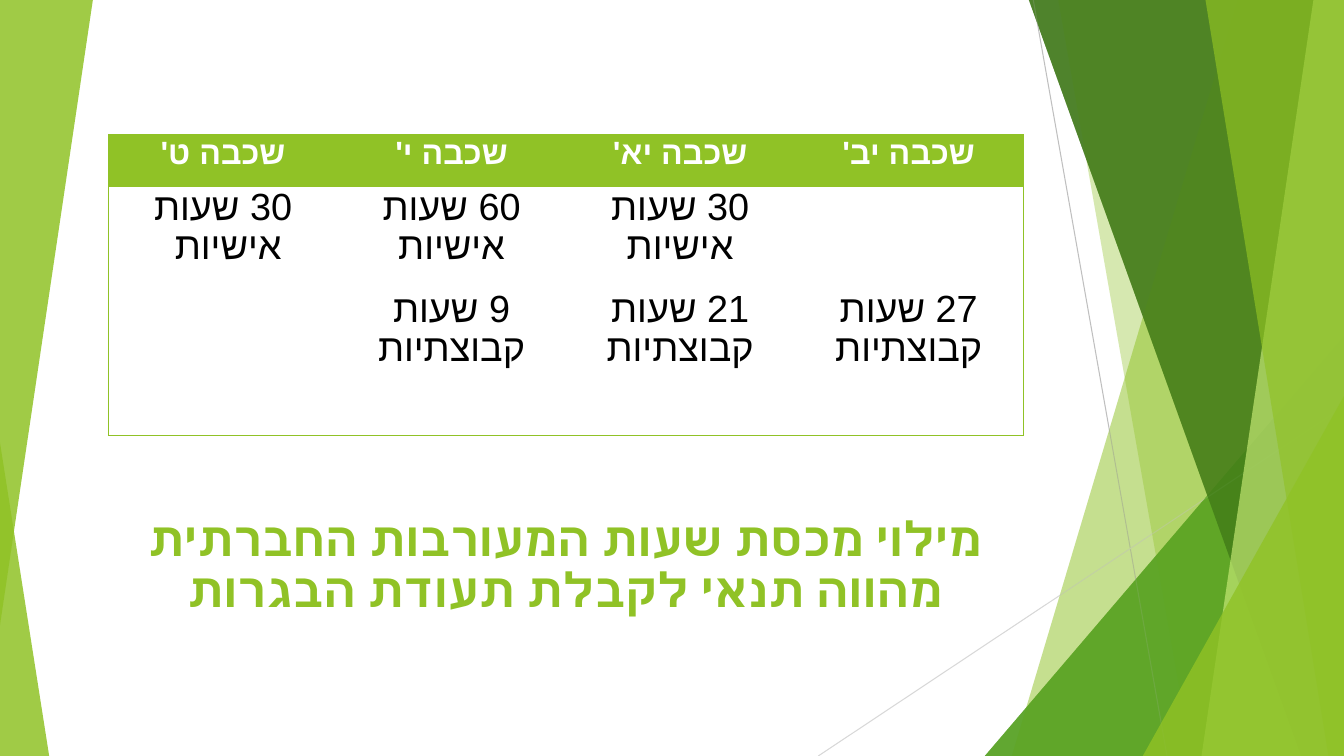
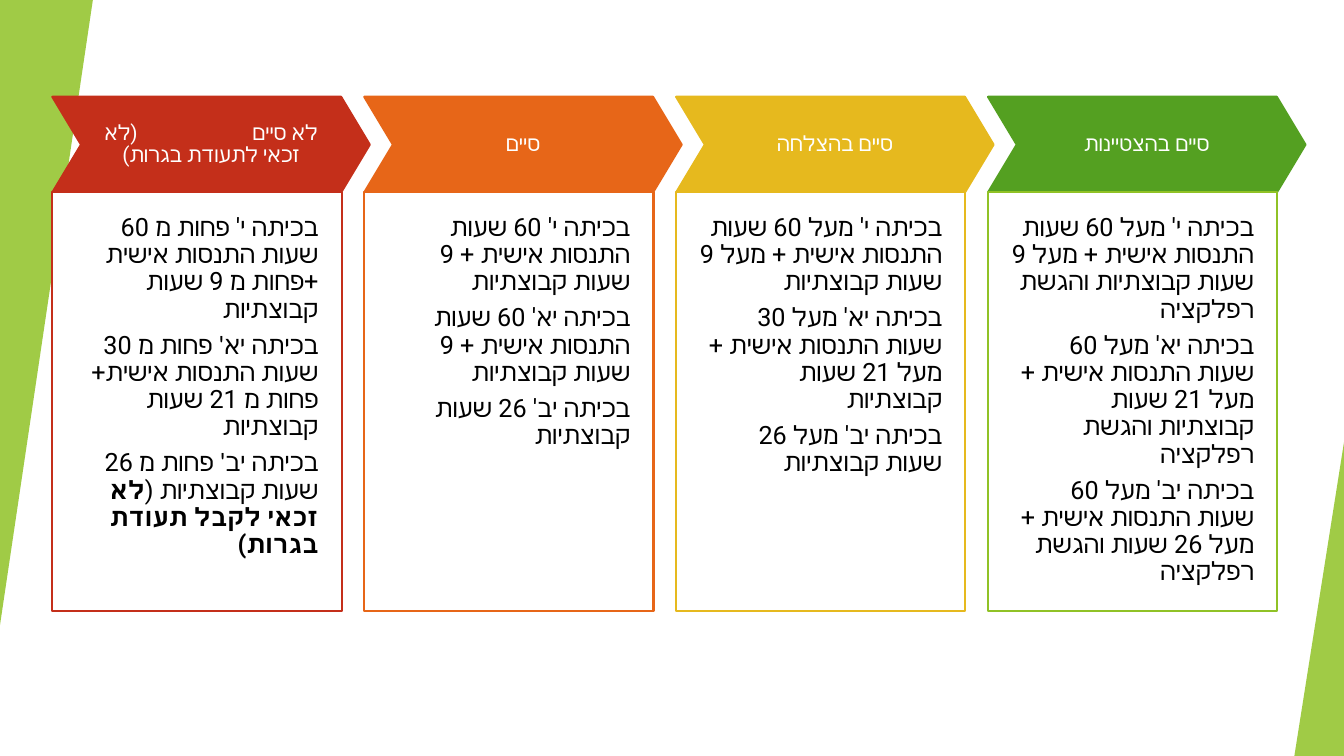
import dataclasses

import lxml.etree
import pptx
import pptx.dml.color
import pptx.enum.shapes
import pptx.enum.text
import pptx.oxml.ns
import pptx.util

Cm = pptx.util.Cm
Pt = pptx.util.Pt
qn = pptx.oxml.ns.qn
Sub = lxml.etree.SubElement
Kind = pptx.enum.shapes.MSO_SHAPE
Align = pptx.enum.text.PP_ALIGN
Anchor = pptx.enum.text.MSO_ANCHOR

WIDE, HIGH = 33.87, 19.05


@dataclasses.dataclass(frozen=True)
class Theme:
    lime: str = "90C226"
    green: str = "54A021"
    dark: str = "3F7818"
    pale: str = "BFE471"
    red: str = "C42F1A"
    orange: str = "E76618"
    gold: str = "E6B91E"
    white: str = "FFFFFF"
    black: str = "000000"
    gray: str = "BFBFBF"
    mist: str = "D8D8D8"
    main: str = "Roboto"
    alt: str = "Lato"
    grid: str = "Arial"
    title: int = 34
    cell: int = 27
    head: int = 23
    body: int = 18
    step: int = 15


def rgb(color):
    return pptx.dml.color.RGBColor.from_string(color)


def write(frame, paras, *, size, color, font, bold=False, align=Align.CENTER,
          rtl=True, lines=None, before=0, pad=None, anchor=None):
    """Fill a text frame; a paragraph is a string or a list of (text, changes)."""
    frame.word_wrap = True
    if anchor is not None:
        frame.vertical_anchor = anchor
    if pad:
        (frame.margin_left, frame.margin_top,
         frame.margin_right, frame.margin_bottom) = map(Cm, pad)
    for i, runs in enumerate(paras):
        para = frame.paragraphs[0] if i == 0 else frame.add_paragraph()
        para.alignment = align
        if lines:
            para.line_spacing = lines
        para.space_before = Pt(before if i else 0)
        if rtl:
            para._p.get_or_add_pPr().set("rtl", "1")
        for text, diff in [(runs, {})] if isinstance(runs, str) else runs:
            run = para.add_run()
            run.text = text
            run.font.size = Pt(size)
            run.font.bold = diff.get("bold", bold)
            run.font.color.rgb = rgb(color)
            run.font.name = face = diff.get("font", font)
            props = run._r.get_or_add_rPr()
            Sub(props, qn("a:cs"), typeface=face)
            if "gap" in diff:
                props.set("spc", str(diff["gap"] * 100))


class Deck:
    def __init__(self, theme):
        self.theme = theme
        self.show = pptx.Presentation()
        self.show.slide_width, self.show.slide_height = Cm(WIDE), Cm(HIGH)

    def page(self, layout):
        self.slide = self.show.slides.add_slide(self.show.slide_layouts[layout])

    def paint(self, shape, fill, alpha=100, line=None):
        shape.shadow.inherit = False
        shape.fill.solid()
        shape.fill.fore_color.rgb = rgb(fill)
        if alpha < 100:
            tone = shape._element.spPr.find(".//" + qn("a:srgbClr"))
            Sub(tone, qn("a:alpha"), val=str(alpha * 1000))
        if line:
            shape.line.color.rgb = rgb(line)
            shape.line.width = Pt(1.5)
        else:
            shape.line.fill.background()
        return shape

    def shape(self, kind, box, fill, adj=None, **look):
        item = self.slide.shapes.add_shape(kind, *map(Cm, box))
        if adj is not None:
            item.adjustments[0] = adj
        return self.paint(item, fill, **look)

    def wedge(self, top, base, fill, alpha):
        """Band from a slanted left edge to the right edge of the slide."""
        pen = self.slide.shapes.build_freeform(Cm(top), 0)
        pen.add_line_segments([(Cm(WIDE), 0), (Cm(WIDE), Cm(HIGH)),
                               (Cm(base), Cm(HIGH))])
        self.paint(pen.convert_to_shape(), fill, alpha)

    def corner(self, left, top, fill, alpha):
        """Right triangle that fills the lower right corner."""
        box = left, top, WIDE - left, HIGH - top
        self.shape(Kind.ISOSCELES_TRIANGLE, box, fill, adj=1, alpha=alpha)

    def line(self, start, end, color):
        item = self.slide.shapes.add_connector(
            pptx.enum.shapes.MSO_CONNECTOR.STRAIGHT, *map(Cm, start + end))
        item.line.color.rgb = rgb(color)
        item.line.width = Pt(0.75)
        Sub(item._element.spPr, qn("a:effectLst"))

    def bands(self):
        t = self.theme
        self.wedge(31.19, 25.5, t.lime, 30)
        self.wedge(26.67, 30.02, t.lime, 20)
        self.corner(24.82, 8.46, t.green, 72)
        self.wedge(25.93, 32.79, t.dark, 70)
        self.wedge(33.1, 30.28, t.pale, 70)
        self.wedge(30.38, 33.48, t.lime, 65)
        self.corner(28.8, 9.98, t.lime, 80)

    def flank(self):
        """Tall triangle down the left edge."""
        item = self.shape(Kind.ISOSCELES_TRIANGLE, (0, 0, 2.34, 15.75),
                          self.theme.lime, adj=1, alpha=85)
        item.rotation = 180

    def title(self, text, box):
        t, item = self.theme, self.slide.shapes.title
        item.left, item.top, item.width, item.height = map(Cm, box)
        write(item.text_frame, [text], size=t.title, color=t.lime, font=t.main,
              bold=True, rtl=False, lines=0.9, anchor=Anchor.BOTTOM,
              pad=(0.25, 0.13, 0.25, 0.13))

    def edge(self, cell, sides):
        props = cell._tc.get_or_add_tcPr()
        for side in "LRTB":
            line = Sub(props, qn("a:ln" + side), w=str(Pt(0.75)))
            if side in sides:
                fill = Sub(line, qn("a:solidFill"))
                Sub(fill, qn("a:srgbClr"), val=self.theme.lime)
            else:
                Sub(line, qn("a:noFill"))

    def table(self, rows, left, top, width, highs):
        t, cols = self.theme, len(rows[0])
        grid = self.slide.shapes.add_table(
            len(rows), cols, *map(Cm, (left, top, width * cols, sum(highs)))).table
        grid.first_row = grid.horz_banding = False
        for col in grid.columns:
            col.width = Cm(width)
        for r, row in enumerate(rows):
            grid.rows[r].height = Cm(highs[r])
            for c, text in enumerate(row):
                cell = grid.cell(r, c)
                cell.margin_left = cell.margin_right = Cm(0.2)
                cell.margin_top = cell.margin_bottom = Cm(0.1)
                self.edge(cell, "L" * (c == 0) + "R" * (c == cols - 1)
                          + "T" * (r < 2) + "B" * (r != 0))
                if r == 0:
                    cell.fill.solid()
                    cell.fill.fore_color.rgb = rgb(t.lime)
                else:
                    cell.fill.background()
                if text:
                    write(cell.text_frame, [text], font=t.grid, bold=r == 0,
                          size=t.cell if r else t.head,
                          color=t.black if r else t.white, lines=0.9)

    def card(self, left, head, paras, color, line):
        """Chevron heading above a framed list."""
        t = self.theme
        step = self.shape(Kind.CHEVRON, (left, 2.44, 8, 2.41), color,
                          adj=0.3, line=color)
        write(step.text_frame, [head], size=t.step, color=t.white, font=t.main,
              lines=0.9, anchor=Anchor.MIDDLE, pad=(0.3,) * 4)
        body = self.shape(Kind.RECTANGLE, (left, 4.83, 7.29, 10.57), t.white,
                          line=line)
        write(body.text_frame, paras, size=t.body, color=t.black, font=t.main,
              align=Align.RIGHT, lines=0.9, before=6.3, anchor=Anchor.TOP,
              pad=(0.58, 0.58, 0.58, 1.14))


def hours(deck):
    t = deck.theme
    deck.page(5)
    deck.bands()
    deck.shape(Kind.ISOSCELES_TRIANGLE, (0, 11.15, 1.24, 7.9), t.lime,
               adj=0, alpha=85)
    deck.line((26.04, 0), (29.41, HIGH), t.gray)
    deck.line((WIDE, 10.24), (20.62, HIGH), t.mist)
    deck.bands()
    deck.flank()
    deck.title("מילוי מכסת שעות המעורבות החברתית מהווה תנאי לקבלת תעודת הבגרות",
               (2.74, 12.65, 23.01, 3.05))
    deck.table([
        ["שכבה ט'", "שכבה י'", "שכבה יא'", "שכבה יב'"],
        ["30 שעות אישיות ", "60 שעות אישיות", "30 שעות אישיות", ""],
        ["", "9 שעות קבוצתיות", "21 שעות קבוצתיות", "27 שעות קבוצתיות"],
    ], 2.74, 3.4, 5.76, (1.3, 2.57, 3.7))


def grades(deck):
    t = deck.theme
    deck.page(6)
    deck.flank()
    deck.corner(32.62, 11.15, t.lime, 85)
    alt = {"font": t.alt}
    cards = [
        ([("לא סיים", {}), (" ", {"gap": 78}), ("(לא זכאי לתעודת בגרות)", {})], [
            "בכיתה י' פחות מ 60 שעות התנסות אישית +פחות מ 9 שעות קבוצתיות",
            [("בכיתה יא' ", alt),
             ("פחות מ 30 שעות התנסות אישית+ פחות מ 21 שעות קבוצתיות", {})],
            [("בכיתה יב' ", alt), ("פחות מ 26 שעות קבוצתיות (", {}),
             ("לא זכאי לקבל תעודת בגרות)", {"bold": True})],
        ], t.red, t.red),
        ("סיים", [
            "בכיתה י' 60 שעות התנסות אישית + 9 שעות קבוצתיות",
            "בכיתה יא' 60 שעות התנסות אישית + 9 שעות קבוצתיות",
            "בכיתה יב' 26 שעות קבוצתיות",
        ], t.orange, t.orange),
        ("סיים בהצלחה", [
            "בכיתה י' מעל 60 שעות התנסות אישית + מעל 9 שעות קבוצתיות",
            "בכיתה יא' מעל 30 שעות התנסות אישית + מעל 21 שעות קבוצתיות",
            "בכיתה יב' מעל 26 שעות קבוצתיות",
        ], t.gold, t.gold),
        ("סיים בהצטיינות", [
            "בכיתה י' מעל 60 שעות התנסות אישית + מעל 9 שעות קבוצתיות והגשת רפלקציה",
            "בכיתה יא' מעל 60 שעות התנסות אישית + מעל 21 שעות קבוצתיות והגשת רפלקציה",
            "בכיתה יב' מעל 60 שעות התנסות אישית + מעל 26 שעות והגשת רפלקציה",
        ], t.green, t.lime),
    ]
    for i, card in enumerate(cards):
        deck.card(1.32 + 7.86 * i, *card)


def main():
    deck = Deck(Theme())
    hours(deck)
    grades(deck)
    deck.show.save("out.pptx")


if __name__ == "__main__":
    main()
